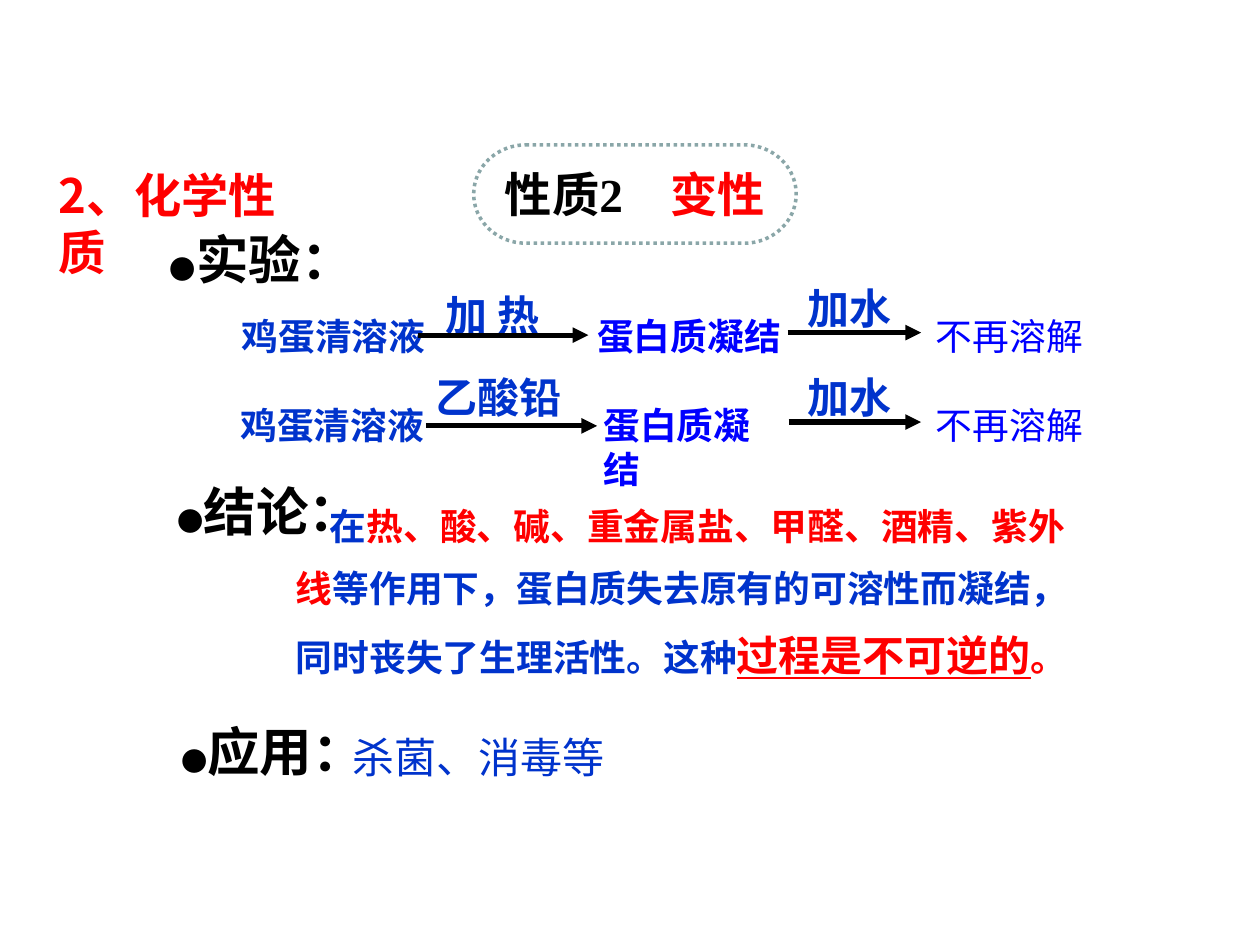
"""Build a slide on protein denaturation: experiments, conclusion and application."""
from lxml import etree
from pptx import Presentation
from pptx import util as u
from pptx.dml.color import RGBColor
from pptx.enum import dml, shapes, text
from pptx.oxml.ns import qn

TIMES, NOTO = "Times New Roman", "Noto Sans CJK SC"
BLACK, BLUE, BRIGHT, RED = "000000", "0033CC", "0000FF", "FF0000"


def color(value):
    return RGBColor.from_string(value)


def add_runs(p, runs, font=TIMES, bold=True):
    for content, size, value in runs:
        r = p.add_run()
        r.text = content
        r.font.size = u.Pt(size)
        r.font.bold = bold
        r.font.name = font
        r.font.color.rgb = color(value)
        ea = etree.SubElement(r.font._element, qn("a:ea"))
        ea.set("typeface", NOTO)


prs = Presentation()
prs.slide_width, prs.slide_height = u.Inches(10), u.Inches(7.5)
s = prs.slides.add_slide(prs.slide_layouts[6])

boxes = [
    (0.37, 1.27, 2.27, 0.55, [("2、化学性质", 27, RED)], NOTO, True),
    (2.7, 5.76, 3.61, 0.5, [("杀菌、消毒等", 24, BLUE)], TIMES, False),
]
for x, y, w, label in [(1.25, 1.75, 2.39, "实验："), (1.31, 3.75, 2.27, "结论："),
                       (1.34, 5.66, 1.98, "应用：")]:
    boxes.append((x, y, w, 0.6, [("●", 15, BLACK), (label, 30, BLACK)], TIMES, True))

experiments = [
    (2.44, 1.82, (3.44, 2.25, 1.12, "加 热"), (4.64, 1.67, 0.45), 2.19),
    (3.15, 1.81, (3.36, 2.9, 1.21, "乙酸铅"), (4.69, 1.62, 0.81), 2.9),
]
for y, start, (x, top, w, agent), (mid, mid_w, mid_h), water in experiments:
    boxes += [
        (start, y, 1.73, 0.45, [("鸡蛋清溶液", 21, BLUE)], TIMES, True),
        (x, top, w, 0.5, [(agent, 24, BLUE)], TIMES, True),
        (mid, y, mid_w, mid_h, [("蛋白质凝结", 21, BRIGHT)], TIMES, True),
        (6.31, water, 1.03, 0.5, [("加水", 24, BLUE)], TIMES, True),
        (7.33, y, 1.42, 0.45, [("不再溶解", 21, BRIGHT)], TIMES, False),
    ]

conclusion = [
    ("在", 21, BLUE),
    ("热、酸、碱、重金属盐、甲醛、酒精、紫外线", 21, RED),
    ("等作用下，蛋白质失去原有的可溶性而凝结，同时丧失了生理活性。这种", 21, BLUE),
    ("过程是不可逆的", 24, RED),
    ("。", 21, RED),
]
boxes.append((2.25, 3.81, 6.56, 1.65, conclusion, NOTO, True))

for x, y, w, h, runs, font, bold in boxes:
    sp = s.shapes.add_textbox(u.Inches(x), u.Inches(y), u.Inches(w), u.Inches(h))
    tf = sp.text_frame
    tf.word_wrap = True
    p = tf.paragraphs[0]
    add_runs(p, runs, font, bold)

p.line_spacing = 1.4
p._p.get_or_add_pPr().set("indent", str(u.Inches(0.27)))
p.runs[3].font.underline = True

for x1, x2, y in [(3.32, 4.67, 2.66), (6.25, 7.31, 2.64),
                  (3.38, 4.74, 3.38), (6.26, 7.31, 3.35)]:
    arrow = s.shapes.add_connector(shapes.MSO_CONNECTOR.STRAIGHT, u.Inches(x1),
                                   u.Inches(y), u.Inches(x2), u.Inches(y))
    arrow.line.width = u.Pt(3)
    arrow.line.color.rgb = color(BLACK)
    etree.SubElement(arrow.line._get_or_add_ln(), qn("a:tailEnd")).set("type", "triangle")
    etree.SubElement(arrow._element.spPr, qn("a:effectLst"))

sp = s.shapes.add_shape(shapes.MSO_SHAPE.FLOWCHART_TERMINATOR, u.Inches(3.76),
                        u.Inches(1.15), u.Inches(2.56), u.Inches(0.78))
sp.shadow.inherit = False
sp.fill.background()
sp.line.color.rgb = color("8AA6A8")
sp.line.width = u.Pt(2)
sp.line.dash_style = dml.MSO_LINE.ROUND_DOT
tf = sp.text_frame
tf.word_wrap = False
tf.vertical_anchor = text.MSO_ANCHOR.MIDDLE
p = tf.paragraphs[0]
p.alignment = text.PP_ALIGN.CENTER
add_runs(p, [("性质2　", 27, BLACK), ("变性", 27, RED)])

prs.save("out.pptx")
